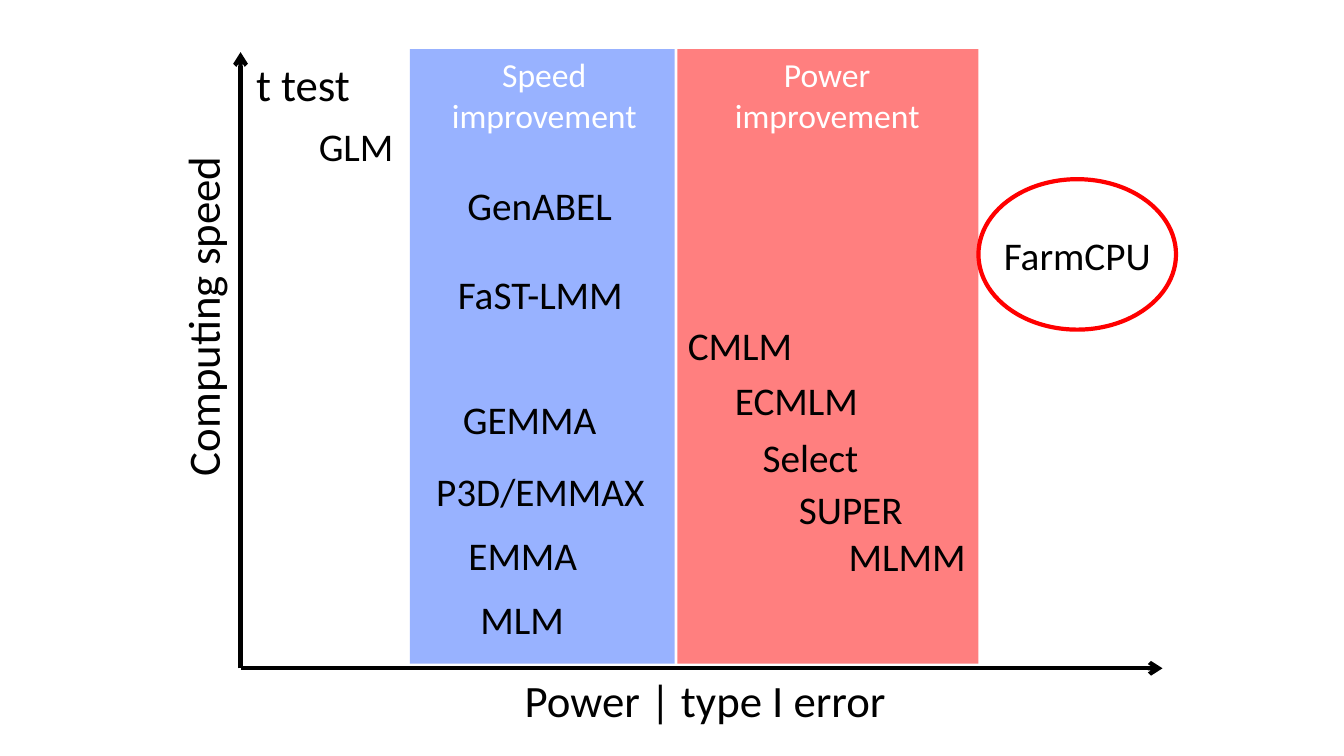
from pptx import Presentation
from pptx.dml.color import RGBColor
from pptx.enum.shapes import MSO_CONNECTOR, MSO_SHAPE
from pptx.enum.text import MSO_AUTO_SIZE, PP_ALIGN
from pptx.oxml.ns import qn
from pptx.util import Inches, Pt
from lxml import etree

BLACK = RGBColor(0x00, 0x00, 0x00)
WHITE = RGBColor(0xFF, 0xFF, 0xFF)
RED = RGBColor(0xFF, 0x00, 0x00)
BLUE = RGBColor(0x33, 0x66, 0xFF)
STRAIGHT = MSO_CONNECTOR.STRAIGHT
RECTANGLE, OVAL = MSO_SHAPE.RECTANGLE, MSO_SHAPE.OVAL
LEFT, CENTER = PP_ALIGN.LEFT, PP_ALIGN.CENTER
GROW = MSO_AUTO_SIZE.SHAPE_TO_FIT_TEXT

ORIGIN = (17.9, 88.4)
BAND_TOP, BAND_HEIGHT = 6.5, 81.3
LARGE, MEDIUM, SMALL = 32, 28, 24
TEXT_HEIGHT = {LARGE: 8.5, MEDIUM: 7.6, SMALL: 12.1}

BANDS = [(50.4, 22.4, RED), (30.5, 19.7, BLUE)]
HEADINGS = [("Speed improvement", 30.8, 19.4), ("Power\nimprovement", 50.2, 22.7)]
METHODS = [
    ("GLM", 22.3, 15.5, 8.4),
    ("GenABEL", 32.4, 23.3, 15.5),
    ("FaST-LMM", 30.5, 35.1, 19.4),
    ("GEMMA", 32.4, 51.7, 14),
    ("P3D/EMMAX", 30.5, 61.2, 19.4),
    ("EMMA", 32.4, 69.6, 13),
    ("MLM", 34.2, 78.1, 9.3),
    ("CMLM", 49.7, 41.9, 10.7),
    ("ECMLM", 52.1, 49.1, 14.3),
    ("Select", 54.2, 56.7, 12.2),
    ("SUPER", 57.2, 63.5, 12.2),
    ("MLMM", 61.1, 69.7, 12.8),
    ("FarmCPU", 72.8, 29.9, 14.7),
]


class Chart:
    """Draws styled elements on one slide, placed in percent of its size."""

    font = "Calibri"
    stroke = Pt(3)

    def __init__(self, deck):
        self.size = (deck.slide_width, deck.slide_height)
        self.slide = deck.slides.add_slide(deck.slide_layouts[6])

    def scale(self, *shares):
        return [int(share * self.size[i % 2] / 100) for i, share in enumerate(shares)]

    def band(self, left, width, color):
        box = self.slide.shapes.add_shape(
            RECTANGLE, *self.scale(left, BAND_TOP, width, BAND_HEIGHT))
        box.shadow.inherit = False
        box.line.fill.background()
        box.fill.solid()
        box.fill.fore_color.rgb = color
        tint = box.fill._xPr.find(qn("a:solidFill"))[0]
        etree.SubElement(tint, qn("a:alpha"), val="50000")

    def ring(self, left, top, width, height):
        oval = self.slide.shapes.add_shape(OVAL, *self.scale(left, top, width, height))
        oval.shadow.inherit = False
        oval.fill.background()
        oval.line.color.rgb = RED
        oval.line.width = self.stroke

    def axis(self, end):
        line = self.slide.shapes.add_connector(STRAIGHT, *self.scale(*ORIGIN, *end))
        line.line.color.rgb = BLACK
        line.line.width = self.stroke
        etree.SubElement(line.line._get_or_add_ln(), qn("a:tailEnd"), type="arrow")
        etree.SubElement(line._element.spPr, qn("a:effectLst"))

    def label(self, text, left, top, width, size=MEDIUM, color=BLACK,
              align=CENTER, rotation=0):
        box = self.slide.shapes.add_textbox(
            *self.scale(left, top, width, TEXT_HEIGHT[size]))
        box.rotation = rotation
        frame = box.text_frame
        frame.word_wrap = True
        frame.auto_size = GROW
        frame.text = text
        for para in frame.paragraphs:
            para.alignment = align
            para.font.name = self.font
            para.font.size = Pt(size)
            para.font.color.rgb = color


def main():
    deck = Presentation()
    deck.slide_width, deck.slide_height = Inches(13.33), Inches(7.5)
    chart = Chart(deck)
    for band in BANDS:
        chart.band(*band)
    for end in ((86.5, ORIGIN[1]), (ORIGIN[0], 6.9)):
        chart.axis(end)
    chart.label("Computing speed", 0.9, 34.9, 28.3, LARGE, align=LEFT, rotation=270)
    chart.label("Power | type I error", 38.3, 88.3, 31.6, LARGE, align=LEFT)
    chart.label("t test", ORIGIN[0], 6.9, 9.3, LARGE)
    for method in METHODS:
        chart.label(*method)
    for text, left, width in HEADINGS:
        chart.label(text, left, BAND_TOP, width, SMALL, WHITE)
    chart.ring(72.8, 23.7, 14.7, 19.9)
    deck.save("out.pptx")


if __name__ == "__main__":
    main()
